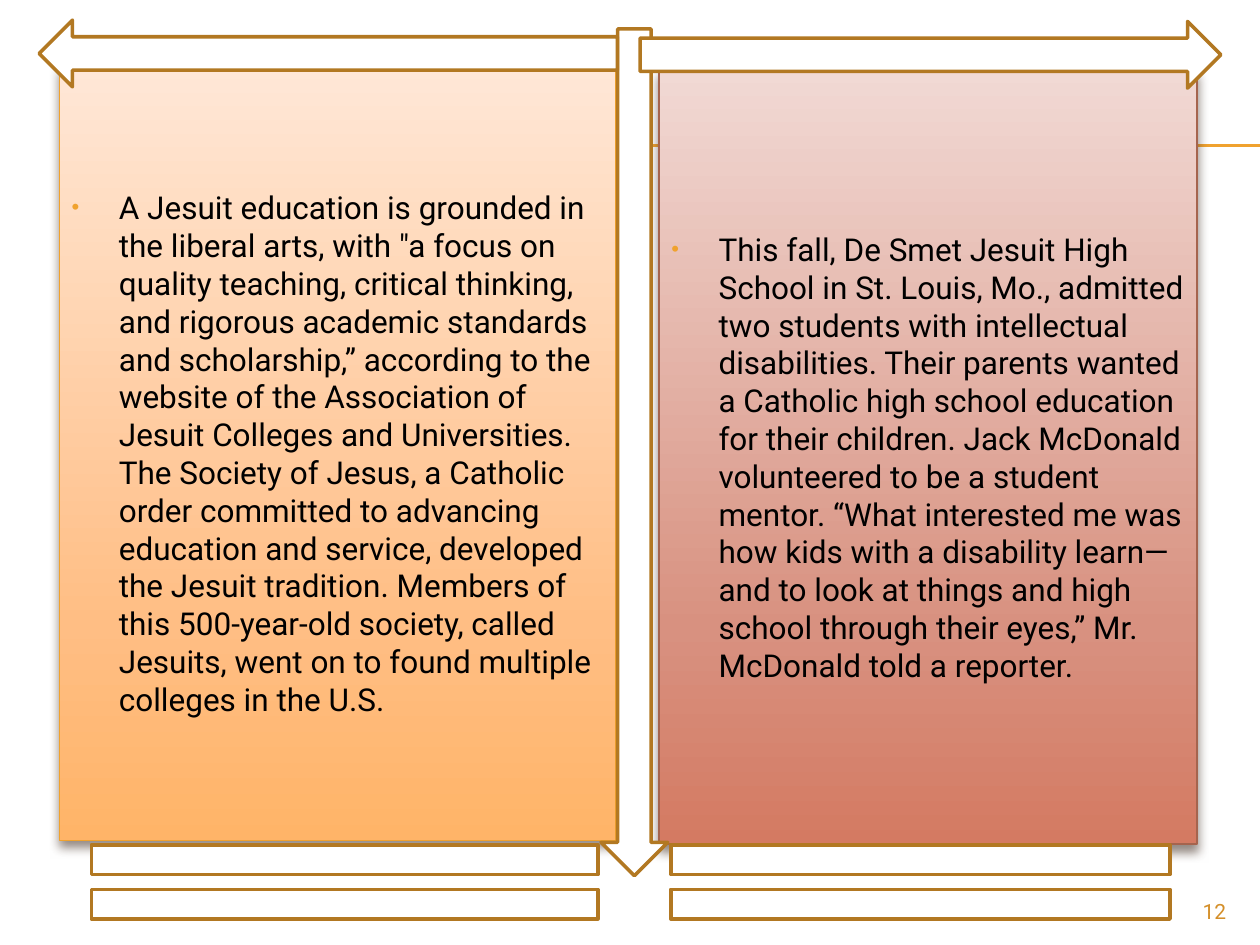
"""Build a slide with two shaded text panels framed by arrows and equal signs."""
from copy import deepcopy

from lxml import etree
from pptx import Presentation
from pptx.dml.color import RGBColor
from pptx.enum.shapes import MSO_CONNECTOR, MSO_SHAPE
from pptx.enum.text import MSO_ANCHOR, PP_ALIGN
from pptx.oxml.ns import qn
from pptx.util import Pt

STRAIGHT = MSO_CONNECTOR.STRAIGHT
RECTANGLE = MSO_SHAPE.RECTANGLE
DOWN, RIGHT, LEFT = MSO_SHAPE.DOWN_ARROW, MSO_SHAPE.RIGHT_ARROW, MSO_SHAPE.LEFT_ARROW
EQUAL = MSO_SHAPE.MATH_EQUAL
TOP, MIDDLE = MSO_ANCHOR.TOP, MSO_ANCHOR.MIDDLE
ALIGN_LEFT, ALIGN_RIGHT = PP_ALIGN.LEFT, PP_ALIGN.RIGHT

THEME = {
    "font": "Roboto", "body_size": 18, "number_size": 12,
    "text": "000000", "number": "D48F29", "accent": "F0A22E",
    "outline": "B27822", "white": "FFFFFF", "shadow": "4E3B30",
}
SLIDE_SIZE = (720, 540)
INDENT = 27

PANELS = [
    {
        "box": (33.84, 37.44, 318.24, 442.8),
        "stops": [(0, "FFE7D7"), (0.72, "FFBE84"), (1, "FFB468")],
        "line": "F0A22E",
        "text": "A Jesuit education is grounded in the liberal arts, with \"a focus on quality "
                "teaching, critical thinking, and rigorous academic standards and scholarship,” "
                "according to the website of the Association of Jesuit Colleges and Universities. "
                "The Society of Jesus, a Catholic order committed to advancing education and "
                "service, developed the Jesuit tradition. Members of this 500-year-old society, "
                "called Jesuits, went on to found multiple colleges in the U.S.",
    },
    {
        "box": (376.56, 39.6, 307.44, 442.8),
        "stops": [(0, "F1D9D4"), (0.72, "D89180"), (1, "D47A62")],
        "line": "A5644E",
        "text": "This fall, De Smet Jesuit High School in St. Louis, Mo., admitted two students "
                "with intellectual disabilities. Their parents wanted a Catholic high school "
                "education for their children. Jack McDonald volunteered to be a student mentor. "
                "“What interested me was how kids with a disability learn—and to look at things "
                "and high school through their eyes,” Mr. McDonald told a reporter.",
    },
]
FRAME = [
    (DOWN, (343.44, 16.56, 38.16, 483.84)),
    (RIGHT, (365.76, 12.24, 331.92, 38.16)),
    (LEFT, (22.32, 11.52, 330.48, 38.16)),
    (EQUAL, (0, 468, 393.84, 72)),
    (EQUAL, (331.92, 468, 388.08, 72)),
]
RULE_START, RULE_HEIGHTS = 40.32, (82.8, 83.52)
NUMBER, NUMBER_BOX = "12", (648, 509.76, 59.76, 19.44)


def points(values):
    return [Pt(value) for value in values]


def color(name):
    return RGBColor.from_string(THEME.get(name, name))


def add_element(parent, tag, **attributes):
    return etree.SubElement(parent, qn(tag), attributes)


def add_bullet(paragraph):
    properties = paragraph._p.get_or_add_pPr()
    properties.set("marL", str(Pt(INDENT)))
    properties.set("indent", str(-Pt(INDENT)))
    add_element(add_element(properties, "a:buClr"), "a:srgbClr", val=THEME["accent"])
    add_element(properties, "a:buSzPct", val="70000")
    add_element(properties, "a:buFont", typeface="Arial")
    add_element(properties, "a:buChar", char="•")


def write_text(shape, text, *, size, fill, align=ALIGN_LEFT, anchor=TOP, bullet=False):
    frame = shape.text_frame
    frame.word_wrap = True
    frame.vertical_anchor = anchor
    paragraph = frame.paragraphs[0]
    paragraph.alignment = align
    if bullet:
        add_bullet(paragraph)
    run = paragraph.add_run()
    run.text = text
    run.font.name = THEME["font"]
    run.font.size = Pt(THEME[size])
    run.font.color.rgb = color(fill)


def add_outlined(slide, kind, box, line, width):
    shape = slide.shapes.add_shape(kind, *points(box))
    shape.shadow.inherit = False
    shape.line.color.rgb = color(line)
    shape.line.width = Pt(width)
    return shape


def add_rule(slide, height):
    rule = slide.shapes.add_connector(
        STRAIGHT, *points((RULE_START, height, SLIDE_SIZE[0], height)))
    rule.line.color.rgb = color("accent")
    rule.line.width = Pt(0.75)
    add_element(rule._element.spPr, "a:effectLst")


def add_panel(slide, panel):
    shape = add_outlined(slide, RECTANGLE, panel["box"], panel["line"], 0.79)
    shape.fill.gradient()
    shape.fill.gradient_angle = 270
    properties = shape._element.spPr
    stop_list = properties.find(".//" + qn("a:gsLst"))
    stop_list.insert(1, deepcopy(stop_list[0]))
    for stop, (position, shade) in zip(shape.fill.gradient_stops, panel["stops"]):
        stop.position = position
        stop.color.rgb = color(shade)
    shadow = add_element(
        properties.find(qn("a:effectLst")), "a:outerShdw", blurRad=str(Pt(6)),
        dist=str(Pt(4)), dir="5400000", algn="ctr", rotWithShape="0")
    tint = add_element(shadow, "a:srgbClr", val=THEME["shadow"])
    add_element(tint, "a:alpha", val="60000")
    write_text(shape, panel["text"], size="body_size", fill="text", anchor=MIDDLE, bullet=True)


def main():
    presentation = Presentation()
    presentation.slide_width, presentation.slide_height = points(SLIDE_SIZE)
    slide = presentation.slides.add_slide(presentation.slide_layouts[6])
    for height in RULE_HEIGHTS:
        add_rule(slide, height)
    for panel in PANELS:
        add_panel(slide, panel)
    for kind, box in FRAME:
        shape = add_outlined(slide, kind, box, "outline", 2)
        shape.fill.solid()
        shape.fill.fore_color.rgb = color("white")
    number_box = slide.shapes.add_textbox(*points(NUMBER_BOX))
    write_text(number_box, NUMBER, size="number_size", fill="number", align=ALIGN_RIGHT)
    presentation.save("out.pptx")


if __name__ == "__main__":
    main()
